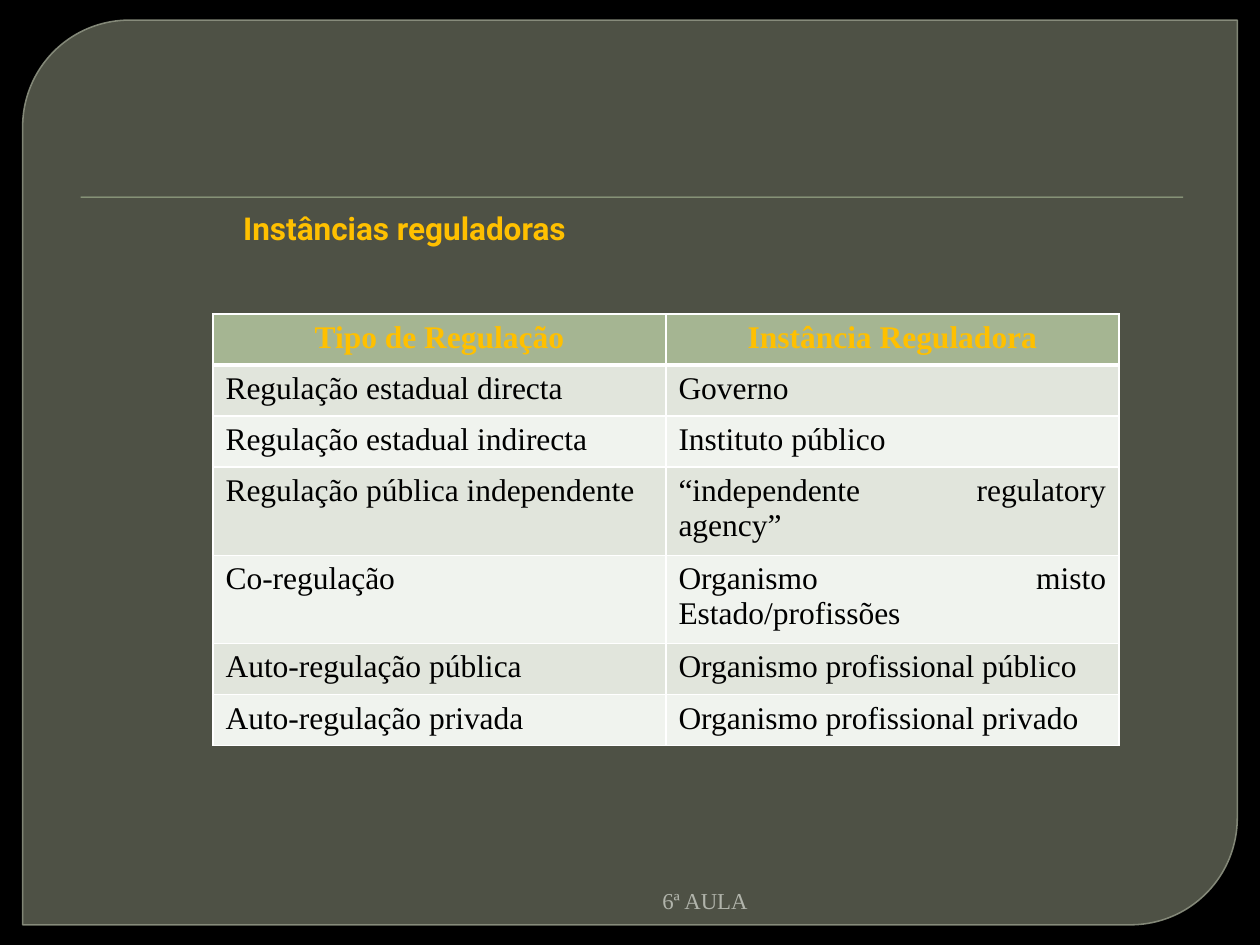
from typing import Any, NamedTuple

from lxml.etree import SubElement
from pptx import Presentation
from pptx.dml.color import RGBColor
from pptx.enum.shapes import MSO_SHAPE as Preset
from pptx.enum.text import MSO_ANCHOR as Anchor, MSO_AUTO_SIZE as AutoSize, PP_ALIGN as Align
from pptx.oxml.ns import qn
from pptx.util import Inches, Pt

GOLD, SAGE, WHITE = "FFC000", "A5B592", "FFFFFF"
SERIF = "Times New Roman"
HEADING = {"name": "Roboto", "size": Pt(18), "bold": True}
HEADER = {"name": SERIF, "size": Pt(18), "bold": True}
ENTRY = {"name": SERIF, "size": Pt(18), "bold": False}
FOOTER = {"name": SERIF, "size": Pt(13), "bold": False}


class Box(NamedTuple):
    left: float
    top: float
    width: float
    height: float

    def lengths(self) -> list:
        return [Inches(value) for value in self]


class Regulation(NamedTuple):
    kind: str
    authority: str


HEADINGS = Regulation("Tipo de Regulação", "Instância Reguladora")
REGULATIONS = [
    Regulation("Regulação estadual directa", "Governo"),
    Regulation("Regulação estadual indirecta", "Instituto público"),
    Regulation("Regulação pública independente", "“independente regulatory agency”"),
    Regulation("Co-regulação", "Organismo misto Estado/profissões"),
    Regulation("Auto-regulação pública", "Organismo profissional público"),
    Regulation("Auto-regulação privada", "Organismo profissional privado"),
]


def paint(fill: Any, color: str, opacity: int = 100) -> None:
    fill.solid()
    fill.fore_color.rgb = RGBColor.from_string(color)
    if opacity < 100:
        tint = fill._xPr.find(qn("a:solidFill"))[0]
        SubElement(tint, qn("a:alpha"), val=str(opacity * 1000))


def apply(target: Any, values: dict) -> None:
    for key, value in values.items():
        setattr(target, key, value)


def write(frame: Any, words: str, font: dict, color: str, align: Align) -> None:
    paragraph = frame.paragraphs[0]
    paragraph.alignment = align
    run = paragraph.add_run()
    run.text = words
    apply(run.font, font)
    paint(run.font.fill, color)


def add_panel(slide: Any, preset: Preset, box: Box, color: str, opacity: int = 100) -> Any:
    panel = slide.shapes.add_shape(preset, *box.lengths())
    panel.shadow.inherit = False
    paint(panel.fill, color, opacity)
    panel.line.fill.background()
    return panel


def add_borders(cell: Any, widths: dict) -> None:
    properties = cell._tc.get_or_add_tcPr()
    for position, (side, width) in enumerate(widths.items()):
        border = properties.makeelement(qn(f"a:{side}"), {"w": str(Pt(width))})
        solid = SubElement(border, qn("a:solidFill"))
        SubElement(solid, qn("a:srgbClr"), val=WHITE)
        properties.insert(position, border)


def add_regulations(slide: Any, box: Box) -> None:
    rows = [HEADINGS, *REGULATIONS]
    table = slide.shapes.add_table(len(rows), len(HEADINGS), *box.lengths()).table
    for number, regulation in enumerate(rows):
        table.rows[number].height = Inches(box.height / len(rows))
        is_header = number == 0
        shade = SAGE if is_header else ("F0F3EE", "E1E5DC")[number % 2]
        font, color, align = (
            (HEADER, GOLD, Align.CENTER) if is_header else (ENTRY, "000000", Align.JUSTIFY)
        )
        widths = {
            "lnL": 1,
            "lnR": 1,
            "lnT": 3 if number == 1 else 1,
            "lnB": 3 if is_header else 1,
        }
        for column, words in enumerate(regulation):
            cell = table.cell(number, column)
            paint(cell.fill, shade)
            write(cell.text_frame, words, font, color, align)
            add_borders(cell, widths)


def add_heading(slide: Any, box: Box) -> None:
    body = slide.placeholders[1]
    apply(body, dict(zip(("left", "top", "width", "height"), box.lengths())))
    frame = body.text_frame
    apply(frame, {
        "auto_size": AutoSize.NONE,
        "vertical_anchor": Anchor.TOP,
        "margin_left": Inches(1.42),
        "margin_top": Inches(0.59),
    })
    write(frame, "Instâncias reguladoras", HEADING, GOLD, Align.LEFT)
    paragraph = frame.paragraphs[0]
    paragraph.space_before = Pt(0)
    properties = paragraph._p.get_or_add_pPr()
    properties.set("marL", "0")
    properties.set("indent", "0")
    SubElement(properties, qn("a:buNone"))


def add_footer(slide: Any, box: Box) -> None:
    frame = slide.shapes.add_textbox(*box.lengths()).text_frame
    apply(frame, {"word_wrap": True, "vertical_anchor": Anchor.MIDDLE})
    write(frame, "6ª AULA", FOOTER, "B1B4AB", Align.RIGHT)


def main() -> None:
    deck = Presentation()
    apply(deck, {"slide_width": Inches(10), "slide_height": Inches(7.5)})
    slide = deck.slides.add_slide(deck.slide_layouts[1])
    paint(slide.background.fill, "000000")
    empty_title = slide.shapes.title.element
    empty_title.getparent().remove(empty_title)

    backdrop = add_panel(
        slide, Preset.ROUND_2_DIAG_RECTANGLE, Box(0.18, 0.16, 9.64, 7.18), "787D6B", 65
    )
    backdrop.adjustments[0] = 0.118
    backdrop.adjustments[1] = 0
    paint(backdrop.line.fill, "8F9483", 88)
    backdrop.line.width = Pt(0.87)
    add_panel(slide, Preset.RECTANGLE, Box(0.64, 1.56, 8.75, 0.01), SAGE)

    body = slide.placeholders[1].element
    body.getparent().append(body)
    add_heading(slide, Box(0.51, 1.07, 8.98, 5.83))
    add_footer(slide, Box(1.42, 7, 4.61, 0.3))
    add_regulations(slide, Box(1.69, 2.49, 7.19, 2.84))
    deck.save("out.pptx")


if __name__ == "__main__":
    main()
